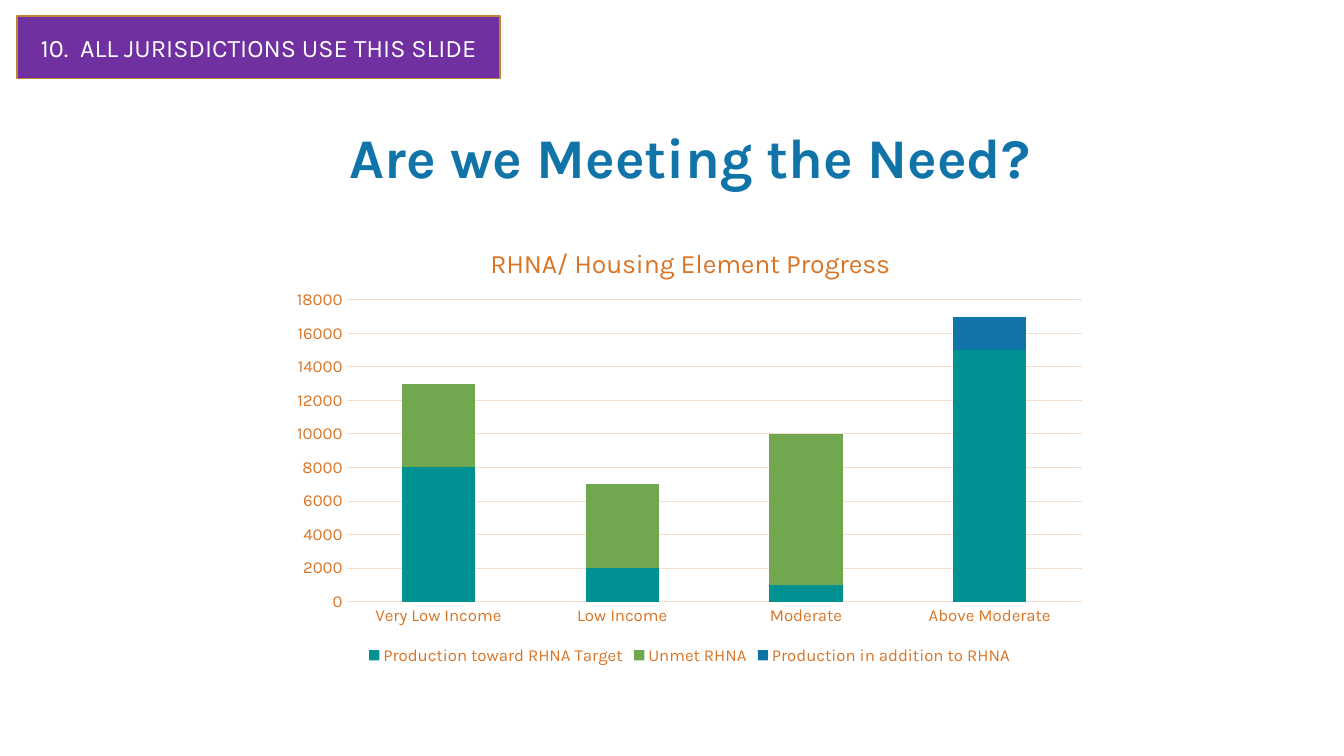
from dataclasses import dataclass

from lxml.etree import SubElement
from pptx import Presentation
from pptx.chart.data import CategoryChartData
from pptx.dml.color import RGBColor
from pptx.enum.chart import XL_CHART_TYPE as ChartType
from pptx.enum.chart import XL_LEGEND_POSITION as LegendPos
from pptx.enum.chart import XL_TICK_MARK as TickMark
from pptx.enum.shapes import MSO_SHAPE as Preset
from pptx.enum.text import MSO_ANCHOR as Anchor
from pptx.enum.text import PP_ALIGN as Align
from pptx.oxml.ns import qn
from pptx.util import Inches, Pt

FONT = "Karla"
BLUE = RGBColor(0x11, 0x74, 0xA9)
TEAL = RGBColor(0x00, 0x91, 0x92)
GREEN = RGBColor(0x71, 0xA8, 0x4F)
ORANGE = RGBColor(0xD9, 0x74, 0x25)
PEACH = RGBColor(0xF6, 0xDF, 0xCD)
PURPLE = RGBColor(0x70, 0x30, 0xA0)
GOLD = RGBColor(0xBC, 0x85, 0x34)
WHITE = RGBColor(0xFF, 0xFF, 0xFF)


@dataclass
class Box:
    left: float
    top: float
    width: float
    height: float

    def lengths(self) -> list:
        return [Inches(v) for v in (self.left, self.top, self.width, self.height)]


@dataclass
class Series:
    name: str
    values: tuple
    color: RGBColor


CATEGORIES = ("Very Low Income", "Low Income", "Moderate", "Above Moderate")
SERIES = (
    Series("Production toward RHNA Target", (8000, 2000, 1000, 15000), TEAL),
    Series("Unmet RHNA", (5000, 5000, 9000, 0), GREEN),
    Series("Production in addition to RHNA", (0, 0, 0, 2000), BLUE),
)


def style_font(font, size: float, color: RGBColor, bold: bool = False) -> None:
    font.name, font.size, font.bold = FONT, Pt(size), bold
    font.color.rgb = color


def write_centered(sp, text: str, size: float, color: RGBColor, bold: bool = False) -> None:
    tf = sp.text_frame
    tf.word_wrap = True
    tf.vertical_anchor = Anchor.MIDDLE
    p = tf.paragraphs[0]
    p.alignment = Align.CENTER
    p.line_spacing = 0.9 if bold else 1.0
    r = p.add_run()
    r.text = text
    style_font(r.font, size, color, bold)


def fill_layout(layout, **settings) -> None:
    """Give a chart part a fixed place, in fractions of the chart."""
    manual = SubElement(layout, qn("c:manualLayout"))
    for tag, value in settings.items():
        SubElement(manual, qn(f"c:{tag}")).set("val", str(value))


def fresh_layout(parent, index: int):
    for old in parent.findall(qn("c:layout")):
        parent.remove(old)
    layout = SubElement(parent, qn("c:layout"))
    parent.insert(index, layout)
    return layout


def add_progress_chart(slide, box: Box) -> None:
    data = CategoryChartData()
    data.categories = CATEGORIES
    for item in SERIES:
        data.add_series(item.name, item.values)
    chart = slide.shapes.add_chart(ChartType.COLUMN_STACKED, *box.lengths(), data).chart
    style_font(chart.font, 12, ORANGE)

    # Columns
    plot = chart.plots[0]
    plot.gap_width, plot.overlap = 150, 100
    plot.vary_by_categories = False
    for series, item in zip(plot.series, SERIES):
        series.format.fill.solid()
        series.format.fill.fore_color.rgb = item.color

    # Axes and gridlines
    for axis in (chart.category_axis, chart.value_axis):
        axis.major_tick_mark = axis.minor_tick_mark = TickMark.NONE
        style_font(axis.tick_labels.font, 12, ORANGE)
    values = chart.value_axis
    values.minimum_scale, values.maximum_scale, values.major_unit = 0, 18000, 2000
    values.format.line.fill.background()
    values.has_major_gridlines = True
    for line in (chart.category_axis.format.line, values.major_gridlines.format.line):
        line.color.rgb = PEACH
        line.width = Pt(0.75)

    # Legend
    chart.has_legend = True
    chart.legend.position = LegendPos.BOTTOM
    chart.legend.include_in_layout = False
    style_font(chart.legend.font, 12, ORANGE)

    # Chart title
    chart.has_title = True
    r = chart.chart_title.text_frame.paragraphs[0].add_run()
    r.text = "RHNA/ Housing Element Progress"
    style_font(r.font, 19, ORANGE)

    # Places of the title and the plot
    area = chart._chartSpace.chart
    fill_layout(fresh_layout(area.find(qn("c:title")), 1),
                xMode="edge", yMode="edge", x=0.25, y=0.05)
    fill_layout(fresh_layout(area.plotArea, 0), layoutTarget="inner",
                xMode="edge", yMode="edge", x=0.08, y=0.18, w=0.9, h=0.67)


def main() -> None:
    prs = Presentation()
    prs.slide_width, prs.slide_height = Inches(13.33), Inches(7.5)
    slide = prs.slides.add_slide(prs.slide_layouts[6])

    # Slide title
    title = slide.shapes.add_textbox(*Box(3.3, 1.02, 7.09, 1.15).lengths())
    write_centered(title, "Are we Meeting the Need?", 40, BLUE, bold=True)

    # Instruction banner
    banner = slide.shapes.add_shape(Preset.RECTANGLE, *Box(0.17, 0.16, 4.79, 0.62).lengths())
    banner.shadow.inherit = False
    banner.fill.solid()
    banner.fill.fore_color.rgb = PURPLE
    banner.line.color.rgb = GOLD
    banner.line.width = Pt(1)
    write_centered(banner, "10.  ALL JURISDICTIONS USE THIS SLIDE", 18, WHITE)

    add_progress_chart(slide, Box(2.79, 2.17, 8.1, 4.47))
    prs.save("out.pptx")


if __name__ == "__main__":
    main()
